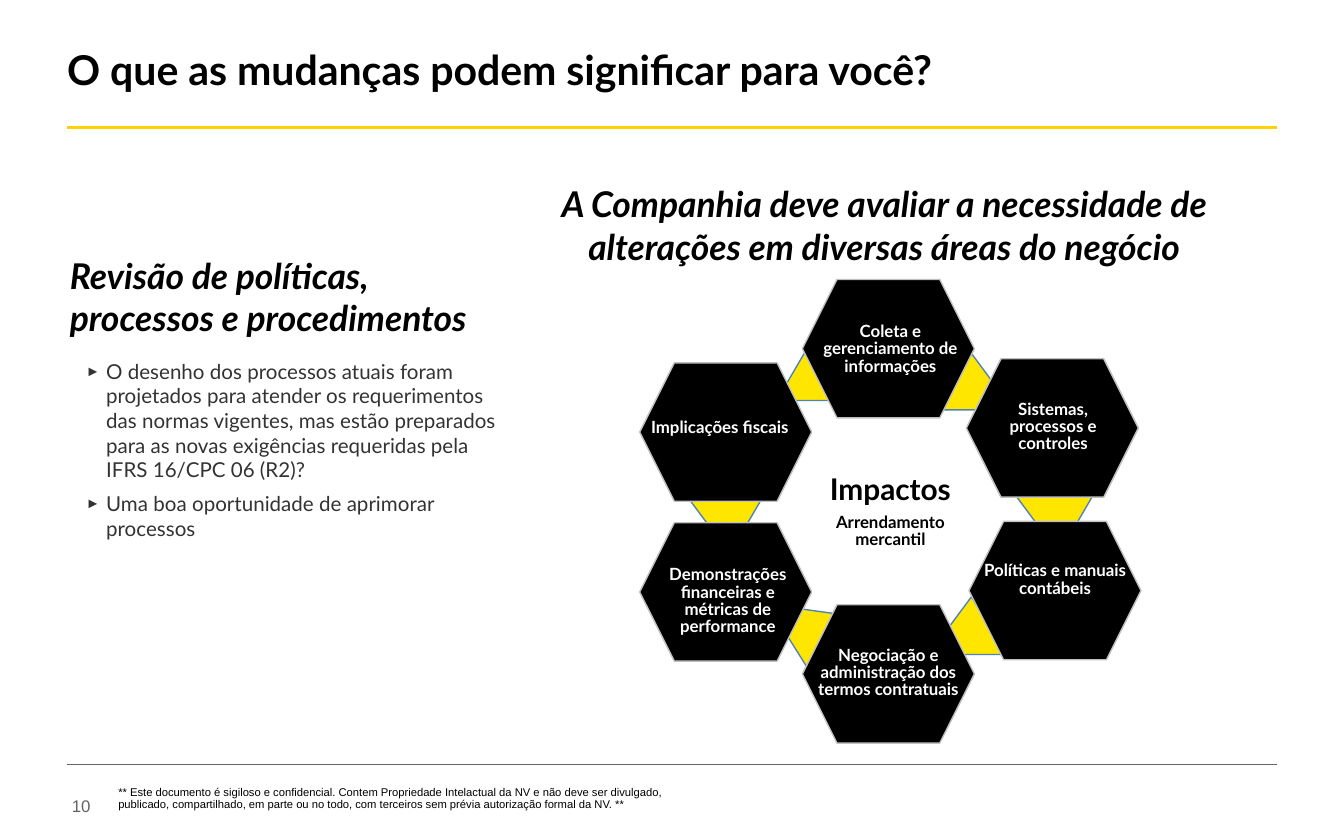
from lxml import etree
from pptx import Presentation
from pptx.dml.color import RGBColor
from pptx.enum.shapes import MSO_CONNECTOR, MSO_SHAPE
from pptx.enum.text import MSO_ANCHOR, PP_ALIGN
from pptx.oxml.ns import qn
from pptx.util import Inches, Pt

STRAIGHT = MSO_CONNECTOR.STRAIGHT
TRIANGLE, HEXAGON = MSO_SHAPE.ISOSCELES_TRIANGLE, MSO_SHAPE.HEXAGON
TOP, BOTTOM = MSO_ANCHOR.TOP, MSO_ANCHOR.BOTTOM
LEFT, CENTER = PP_ALIGN.LEFT, PP_ALIGN.CENTER

WIDTH, HEIGHT = Inches(10), Inches(6.25)
CELL = WIDTH / 100
MARGIN, RIGHT = 5, 95
HEX_SIZE = (12.8, 10.3)
LINK_SIZE = (5.7, 4.3)
COLORS = {
    "black": "000000", "white": "FFFFFF", "body": "333333", "grey": "646464",
    "rule": "FFD200", "link": "FFE600", "link_edge": "4F81BD", "hex_edge": "BFBFBF",
}

# Hexagon column and row, label column, row and width, label
AREAS = [
    (59.7, 20.8, 61, 23.7, 10.5, "Coleta e gerenciamento de informações"),
    (71.9, 26.7, 73.1, 29.5, 10.5, "Sistemas, processos e controles"),
    (72.1, 38.8, 73.1, 41.5, 10.8, "Políticas e manuais contábeis"),
    (59.7, 45, 60.8, 47.8, 10.6, "Negociação e administração dos termos contratuais"),
    (47.6, 38.9, 48.9, 41.8, 10.5, "Demonstrações financeiras e métricas de performance"),
    (47.6, 27, 48.3, 30.8, 10.5, "Implicações fiscais"),
]
# Column, row, size, rotation, position of the apex
LINKS = [
    (57.8, 25.5, LINK_SIZE, 0, 0.44),
    (56.7, 44.1, (4.8, 5.1), 297.6, 0.62),
    (51.1, 36.9, LINK_SIZE, 180, 0.44),
    (69.1, 44.4, LINK_SIZE, 0, 0.56),
    (75.6, 36.9, LINK_SIZE, 180, 0.44),
    (69.7, 26.2, LINK_SIZE, 0, 0.44),
]
POLICY_POINTS = [
    "O desenho dos processos atuais foram projetados para atender os requerimentos das normas "
    "vigentes, mas estão preparados para as novas exigências requeridas pela IFRS 16/CPC 06 (R2)?",
    "Uma boa oportunidade de aprimorar processos",
]
NOTICE = ("** Este documento é sigiloso e confidencial. Contem Propriedade Intelactual da NV e não "
          "deve ser divulgado, publicado, compartilhado, em parte ou no todo, com terceiros sem "
          "prévia autorização formal da NV. **")


def grid(*cells):
    """Turn grid cells into slide lengths."""
    return [round(c * CELL) for c in cells]


def rgb(name):
    """Look up a named colour."""
    return RGBColor.from_string(COLORS[name])


def add_text_box(slide, box, insets=(0, 0, 0, 0), anchor=TOP):
    """Add a wrapping text box and return its text frame."""
    tf = slide.shapes.add_textbox(*grid(*box)).text_frame
    tf.word_wrap = True
    tf.vertical_anchor = anchor
    tf.margin_left, tf.margin_top, tf.margin_right, tf.margin_bottom = grid(*insets)
    return tf


def add_run(p, text, size, color="black", font="Lato", bold=False, italic=False):
    """Add one formatted run to a paragraph."""
    r = p.add_run()
    r.text = text
    r.font.size, r.font.name = Pt(size), font
    r.font.bold, r.font.italic = bold, italic
    r.font.color.rgb = rgb(color)


def add_paragraph(tf, text, size, align=LEFT, spacing=None, **style):
    """Fill the first empty paragraph or append a new one."""
    p = tf.paragraphs[0] if not tf.paragraphs[0].runs else tf.add_paragraph()
    p.alignment = align
    p.line_spacing = spacing
    add_run(p, text, size, **style)
    return p


def add_bullet(p):
    """Give a paragraph a hanging arrow bullet."""
    pPr = p._p.get_or_add_pPr()
    indent = Inches(0.15)
    pPr.set("marL", str(indent))
    pPr.set("indent", str(-indent))
    color = etree.SubElement(pPr, qn("a:buClr"))
    etree.SubElement(color, qn("a:srgbClr"), val=COLORS["body"])
    etree.SubElement(pPr, qn("a:buSzPct"), val="70000")
    etree.SubElement(pPr, qn("a:buFont"), typeface="Arial")
    etree.SubElement(pPr, qn("a:buChar"), char="►")


def add_rule(slide, row, color, width):
    """Draw a horizontal rule between the margins."""
    line = slide.shapes.add_connector(STRAIGHT, *grid(MARGIN, row, RIGHT, row))
    line.line.color.rgb = rgb(color)
    line.line.width = Pt(width)
    etree.SubElement(line._element.spPr, qn("a:effectLst"))


def add_figure(slide, kind, box, fill, edge=None):
    """Add a filled preset shape with an optional edge."""
    sp = slide.shapes.add_shape(kind, *grid(*box))
    sp.shadow.inherit = False
    sp.fill.solid()
    sp.fill.fore_color.rgb = rgb(fill)
    if edge:
        sp.line.color.rgb = rgb(edge)
        sp.line.width = Pt(0.75)
    else:
        sp.line.fill.background()
    return sp


def add_label(slide, box, lines):
    """Add centred bold lines given as text, size and colour."""
    tf = add_text_box(slide, box, (0, 0.4, 0, 0))
    for text, size, color in lines:
        p = add_paragraph(tf, text, size, CENTER, 0.85, color=color, bold=True)
        p.space_after = Pt(4.7)


def add_cycle(slide):
    """Draw the ring of impact areas around its centre."""
    for col, row, size, rotation, apex in LINKS:
        sp = add_figure(slide, TRIANGLE, (col, row, *size), "link", "link_edge")
        sp.rotation = rotation
        sp.adjustments[0] = apex
    add_figure(slide, HEXAGON, (58.3, 32.2, 16, 11.9), "white")
    for col, row, *_ in AREAS:
        add_figure(slide, HEXAGON, (col, row, *HEX_SIZE), "black", "hex_edge")
    add_label(slide, (60.9, 35, 10.7, 4.8),
              [("Impactos", 16, "black"), ("Arrendamento mercantil", 9, "black")])
    for _, _, col, row, width, text in AREAS:
        add_label(slide, (col, row, width, 4.3), [(text, 9, "white")])


def add_policies(slide):
    """Write the left column with its heading and bullets."""
    tf = add_text_box(slide, (5.2, 18.9, 33.1, 6.6))
    add_paragraph(tf, "Revisão de políticas, processos e procedimentos", 19, bold=True, italic=True)
    tf = add_text_box(slide, (6.4, 26.7, 30.7, 15.7))
    for i, text in enumerate(POLICY_POINTS):
        p = add_paragraph(tf, text, 11, color="body")
        add_bullet(p)
        if i:
            p.space_before = Pt(4.7)


def add_frame(slide):
    """Write the title, rules, page number and notice."""
    add_rule(slide, 9.5, "rule", 1.5)
    add_rule(slide, 56.9, "grey", 0.25)
    tf = add_text_box(slide, (MARGIN, 3.9, RIGHT - MARGIN, 7.8))
    add_paragraph(tf, "O que as mudanças podem significar para você?", 22, spacing=0.85, bold=True)
    tf = add_text_box(slide, (5.35, 59.2, 2.6, 1.8))
    add_paragraph(tf, "10", 9, color="grey", font="Arial")
    tf = add_text_box(slide, (8, 58.2, 42.5, 3.6), (0.8, 0.4, 0.8, 0.4))
    add_paragraph(tf, NOTICE, 6, spacing=0.85, font="Arial")


def main():
    """Build and save the slide."""
    prs = Presentation()
    prs.slide_width, prs.slide_height = WIDTH, HEIGHT
    slide = prs.slides.add_slide(prs.slide_layouts[6])
    add_frame(slide)
    add_policies(slide)
    tf = add_text_box(slide, (39.4, 9.8, 55.6, 10.5), (0.3, 0, 3.1, 0.4), BOTTOM)
    add_paragraph(tf, "A Companhia deve avaliar a necessidade de alterações em diversas áreas do negócio",
                  19, CENTER, bold=True, italic=True)
    add_cycle(slide)
    prs.save("out.pptx")


if __name__ == "__main__":
    main()
